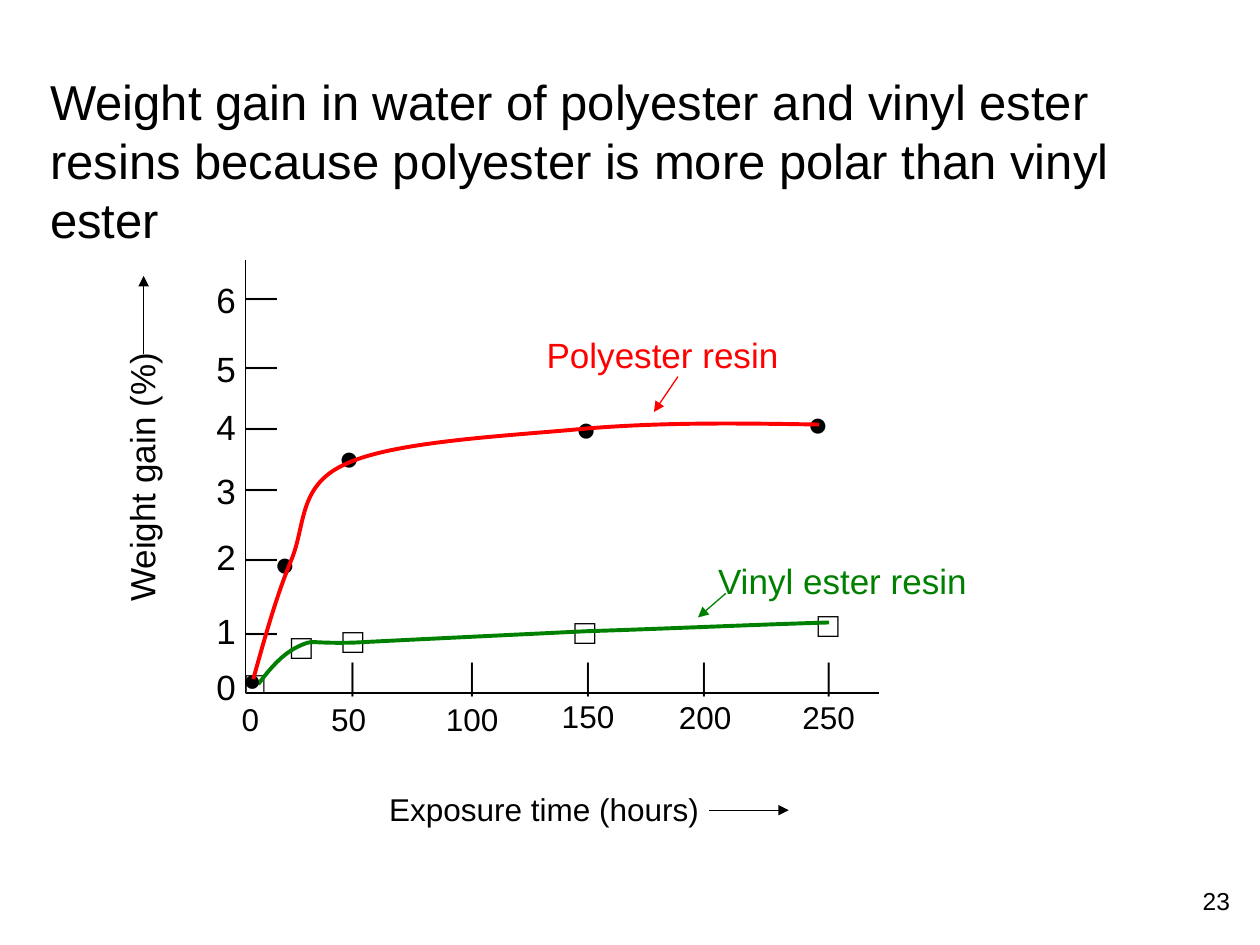
from lxml import etree
from pptx import Presentation
from pptx import util as u
from pptx.dml.color import RGBColor
from pptx.enum import shapes, text
from pptx.oxml.ns import qn

BLACK, RED, GREEN = "000000", "FF0000", "008000"
TITLE = ("Weight gain in water of polyester and vinyl ester resins "
         "because polyester is more polar than vinyl ester")

# Axis labels: value, label top, tick top (y) / value, left, top, width, tick left (x)
Y_AXIS = [("0", 5.23, None), ("1", 4.79, 4.8), ("2", 4.2, 4.21), ("3", 3.68, 3.66),
          ("4", 3.17, 3.17), ("5", 2.71, 2.69), ("6", 2.16, 2.14)]
X_AXIS = [("0", 1.82, 5.51, 0.34, None), ("50", 2.53, 5.51, 0.48, 2.64),
          ("100", 3.44, 5.51, 0.62, 3.59), ("150", 4.36, 5.48, 0.62, 4.51),
          ("200", 5.29, 5.49, 0.62, 5.43), ("250", 6.27, 5.49, 0.62, 6.42)]

# Series: marker boxes (left, top), Bezier points, label box, pointer ends
SERIES = [
    dict(name="Vinyl ester resin", color=GREEN, marker="□",
         marks=[(1.85, 5.21), (2.21, 4.91), (2.62, 4.86), (4.46, 4.79), (6.39, 4.73)],
         curve=[(2.05, 5.43), (2.14, 5.31), (2.24, 5.19), (2.37, 5.13),
                (2.5, 5.07), (2.43, 5.11), (2.81, 5.1),
                (3.19, 5.08), (4.03, 5.04), (4.65, 5.01),
                (5.28, 4.99), (5.93, 4.96), (6.58, 4.94)],
         label=(5.6, 4.39, 2.21, 0.44), pointer=(5.76, 4.71, 5.54, 4.9)),
    dict(name="Polyester resin", color=RED, marker="●",
         marks=[(1.83, 5.19), (2.08, 4.25), (2.59, 3.41), (4.47, 3.18), (6.31, 3.14)],
         curve=[(2.01, 5.39), (2.1, 5.07), (2.19, 4.74), (2.31, 4.45),
                (2.43, 4.17), (2.36, 3.85), (2.75, 3.68),
                (3.14, 3.5), (4.04, 3.46), (4.67, 3.4),
                (5.29, 3.35), (5.9, 3.36), (6.5, 3.37)],
         label=(4.24, 2.6, 2.06, 0.44), pointer=(5.38, 2.99, 5.19, 3.27)),
]

prs = Presentation()
prs.slide_width, prs.slide_height = u.Inches(10), u.Inches(7.5)
s = prs.slides.add_slide(prs.slide_layouts[6])


def rgb(color):
    return RGBColor.from_string(color)


def add_text(words, box, size, color=BLACK, wrap=False, align=None):
    sp = s.shapes.add_textbox(*map(u.Inches, box))
    tf = sp.text_frame
    tf.word_wrap = wrap
    tf.auto_size = text.MSO_AUTO_SIZE.SHAPE_TO_FIT_TEXT
    p = tf.paragraphs[0]
    p.text = words
    p.alignment = align
    p.font.size, p.font.name = u.Pt(size), "Arial"
    p.font.color.rgb = rgb(color)
    return sp


def add_line(ends, color=BLACK, arrow=False):
    c = s.shapes.add_connector(shapes.MSO_CONNECTOR.STRAIGHT, *map(u.Inches, ends))
    c.line.width = u.Pt(0.75)
    c.line.color.rgb = rgb(color)
    if arrow:
        etree.SubElement(c.line._get_or_add_ln(), qn("a:tailEnd"), type="triangle")
    etree.SubElement(c._element.spPr, qn("a:effectLst"))


def add_curve(points, color):
    """Draw a cubic Bezier: a start, then two controls and an end per segment."""
    start, *rest = [(u.Inches(x), u.Inches(y)) for x, y in points]
    fb = s.shapes.build_freeform(*start)
    fb.add_line_segments(rest, close=False)
    sp = fb.convert_to_shape()
    sp.shadow.inherit = False
    sp.fill.background()
    sp.line.color.rgb = rgb(color)
    sp.line.width = u.Pt(2.25)
    steps = list(sp._element.iter(qn("a:lnTo")))
    for i in range(0, len(steps), 3):
        bezier = etree.Element(qn("a:cubicBezTo"))
        steps[i].addprevious(bezier)
        for step in steps[i:i + 3]:
            bezier.append(step[0])
            step.getparent().remove(step)


# Axes
add_line((1.95, 2.06, 1.95, 5.5))
add_line((1.96, 5.5, 6.98, 5.5))
for value, top, tick in Y_AXIS:
    if tick:
        add_text("―", (1.85, tick, 0.45, 0.4), 18)
    add_text(value, (1.62, top, 0.36, 0.44), 20)
for value, left, top, width, tick in X_AXIS:
    if tick:
        add_text("│", (tick, 5.19, 0.34, 0.37), 16)
    add_text(value, (left, top, width, 0.4), 18)

# Axis titles with arrows
add_text("Weight gain (%)", (0.03, 3.56, 2.19, 0.44), 20).rotation = 270
add_line((1.14, 2.81, 1.14, 2.19), arrow=True)
add_text("Exposure time (hours)", (2.99, 6.22, 2.69, 0.4), 18)
add_line((5.63, 6.43, 6.26, 6.43), arrow=True)

# Data series: the marker at the origin is slightly smaller
for series in SERIES:
    for i, (left, top) in enumerate(series["marks"]):
        width, height, size = (0.37, 0.44, 20) if i else (0.35, 0.4, 18)
        add_text(series["marker"], (left, top, width, height), size)
    add_curve(series["curve"], series["color"])
    add_text(series["name"], series["label"], 20, series["color"])
    add_line(series["pointer"], series["color"], arrow=True)

# Title and slide number
add_text(TITLE, (0.3, 0.52, 9.2, 1.51), 28, wrap=True)
add_text("23", (9.25, 6.98, 0.61, 0.36), 14, wrap=True, align=text.PP_ALIGN.RIGHT)

prs.save("out.pptx")
